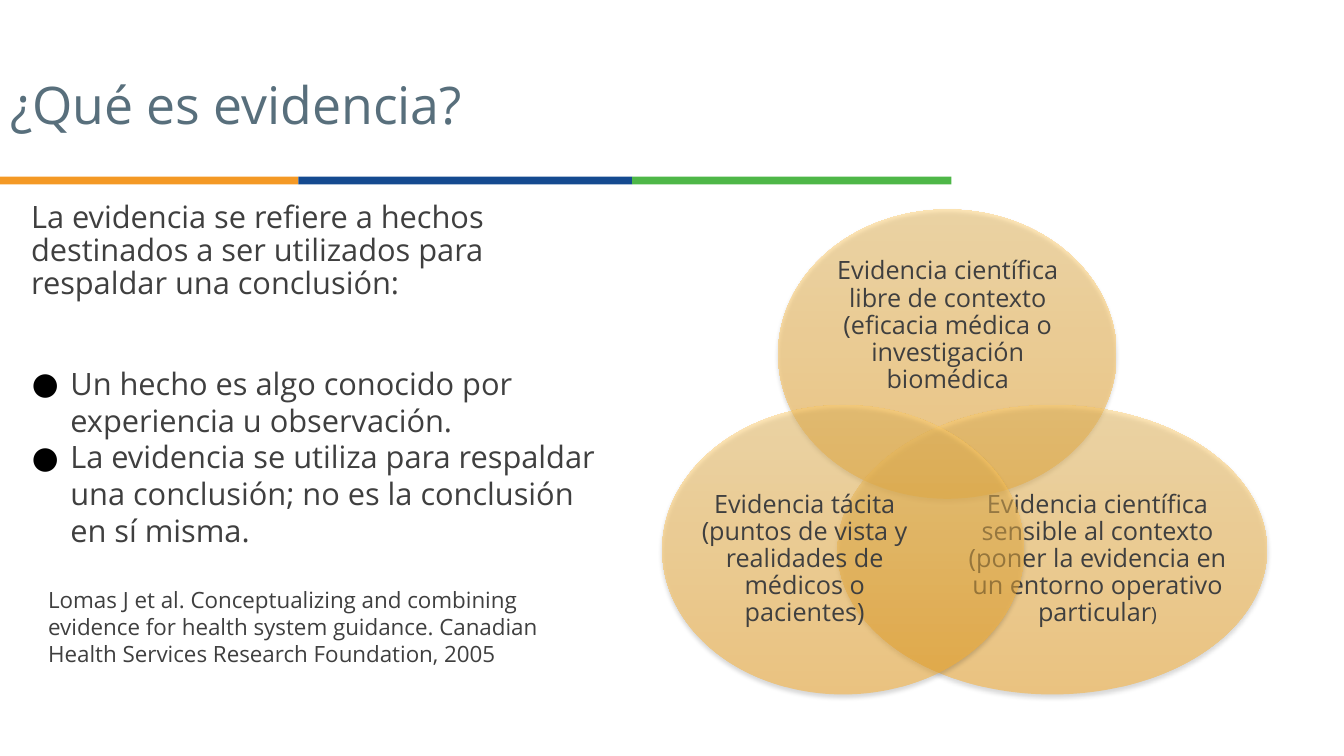
from lxml import etree
from pptx import Presentation
from pptx.dml.color import RGBColor as RGB
from pptx.enum.shapes import MSO_SHAPE as SHAPE
from pptx.enum.text import MSO_ANCHOR as ANCHOR, MSO_AUTO_SIZE as AUTO, PP_ALIGN as ALIGN
from pptx.oxml import parse_xml
from pptx.oxml.ns import nsdecls, qn
from pptx.util import Cm, Pt

COLORS = {
    "title": "586F7C", "text": "3F3F3F", "bullet": "000000",
    "orange": "F49925", "blue": "154A90", "green": "4EB748",
    "venn_low": "FFAD22", "venn_high": "FFCE6C", "shadow": "000000",
}


class SlideBuilder:
    font = "Open Sans"

    def __init__(self, prs):
        self.slide = prs.slides.add_slide(prs.slide_layouts[1])
        self.shapes = self.slide.shapes

    def style(self, target, size, color="text"):
        f = target.font
        f.name, f.size, f.color.rgb = self.font, Pt(size), RGB.from_string(COLORS[color])

    def place(self, sp, box):
        sp.left, sp.top, sp.width, sp.height = map(Cm, box)
        tf = sp.text_frame
        tf.word_wrap, tf.auto_size = True, AUTO.NONE
        return tf

    def title(self, text, box):
        tf = self.place(self.shapes.title, box)
        tf.vertical_anchor = ANCHOR.MIDDLE
        p = tf.paragraphs[0]
        p.text, p.alignment, p.line_spacing = text, ALIGN.LEFT, 0.9
        self.style(p, 37, "title")

    def body(self, items, box):
        tf = self.place(self.slide.placeholders[1], box)
        tf.vertical_anchor = ANCHOR.TOP
        for i, (text, size, spacing, before, margin, indent, bullet) in enumerate(items):
            p = tf.paragraphs[0] if i == 0 else tf.add_paragraph()
            p.text, p.alignment, p.line_spacing = text, ALIGN.LEFT, spacing
            p.space_before, p.space_after = Pt(before), Pt(0)
            pPr = p._p.get_or_add_pPr()
            pPr.set("marL", str(Cm(margin)))
            pPr.set("indent", str(Cm(indent)))
            if bullet:
                clr = etree.SubElement(pPr, qn("a:buClr"))
                etree.SubElement(clr, qn("a:srgbClr"), val=COLORS["bullet"])
                etree.SubElement(pPr, qn("a:buFont"), typeface=self.font)
                etree.SubElement(pPr, qn("a:buChar"), char=bullet)
            else:
                etree.SubElement(pPr, qn("a:buNone"))
            self.style(p, size)

    def bar(self, color, box):
        sp = self.shapes.add_shape(SHAPE.RECTANGLE, *map(Cm, box))
        sp.shadow.inherit = False
        sp.fill.solid()
        sp.fill.fore_color.rgb = RGB.from_string(COLORS[color])
        sp.line.fill.background()

    def ellipse(self, box):
        sp = self.shapes.add_shape(SHAPE.OVAL, *map(Cm, box))
        sp.line.fill.background()
        stops = "".join(
            f'<a:gs pos="{pos}"><a:srgbClr val="{COLORS[name]}"><a:alpha val="47000"/></a:srgbClr></a:gs>'
            for pos, name in ((0, "venn_low"), (100000, "venn_high")))
        sp._element.spPr.find(qn("a:prstGeom")).addnext(parse_xml(
            f'<a:gradFill {nsdecls("a")} rotWithShape="1"><a:gsLst>{stops}</a:gsLst>'
            '<a:lin ang="16200000" scaled="0"/></a:gradFill>'))
        sp._element.spPr.append(parse_xml(
            f'<a:effectLst {nsdecls("a")}><a:outerShdw blurRad="{Pt(3.1)}" dist="{Pt(1.8)}" '
            f'dir="5400000" rotWithShape="0"><a:srgbClr val="{COLORS["shadow"]}">'
            '<a:alpha val="33000"/></a:srgbClr></a:outerShdw></a:effectLst>'))

    def label(self, runs, box):
        tf = self.place(self.shapes.add_textbox(0, 0, 0, 0), box)
        tf.vertical_anchor = ANCHOR.MIDDLE
        tf.margin_left = tf.margin_right = tf.margin_top = tf.margin_bottom = 0
        p = tf.paragraphs[0]
        p.alignment, p.line_spacing = ALIGN.CENTER, 0.9
        for text, size in runs:
            r = p.add_run()
            r.text = text
            self.style(r, size)


def main():
    prs = Presentation()
    prs.slide_width, prs.slide_height = Cm(33.87), Cm(19.05)
    s = SlideBuilder(prs)

    # Tricolour rule under the title
    edges = [0, 7.52, 15.93, 23.88 + 0.1]
    for color, left, right in zip(("orange", "blue", "green"), edges, edges[1:]):
        s.bar(color, (left, 4.45, right - left, 0.2))

    # Title, definition and reference
    s.title("¿Qué es evidencia?", (0, 1.22, 22.83, 3))
    bullet = (0.99, -0.97, "●")
    reference = (0.99, -0.56, None)
    s.body([
        ("La evidencia se refiere a hechos destinados a ser utilizados para "
         "respaldar una conclusión:", 22, 0.9, 0, 0, 0, None),
        ("Un hecho es algo conocido por experiencia u observación.", 22, 1.0, 45, *bullet),
        ("La evidencia se utiliza para respaldar una conclusión; no es la "
         "conclusión en sí misma.", 22, 1.0, 0, *bullet),
        ("Lomas J et al. Conceptualizing and combining", 16, 1.0, 26.4, *reference),
        ("evidence for health system guidance. Canadian", 16, 1.0, 0, *reference),
        ("Health Services Research Foundation, 2005", 16, 1.0, 0, *reference),
    ], (0.53, 4.95, 15.11, 12.57))

    # Venn diagram: each ellipse covers the labels before it
    venn = [
        ((19.61, 5.28, 8.53, 7.29), (20.75, 6.58, 6.27, 3.28),
         [("Evidencia científica libre de contexto (eficacia médica o "
           "investigación biomédica", 18)]),
        ((21.11, 10.21, 10.82, 7.29), (24.41, 12.09, 6.5, 4.01),
         [("Evidencia científica sensible al contexto (poner la evidencia en un "
           "entorno operativo particular", 18), (")", 14)]),
        ((16.69, 10.21, 9.12, 7.29), (17.55, 12.09, 5.46, 4.01),
         [("Evidencia tácita (puntos de vista y realidades de médicos o pacientes)", 18)]),
    ]
    for oval, box, runs in venn:
        s.ellipse(oval)
        s.label(runs, box)

    prs.save("out.pptx")


if __name__ == "__main__":
    main()
